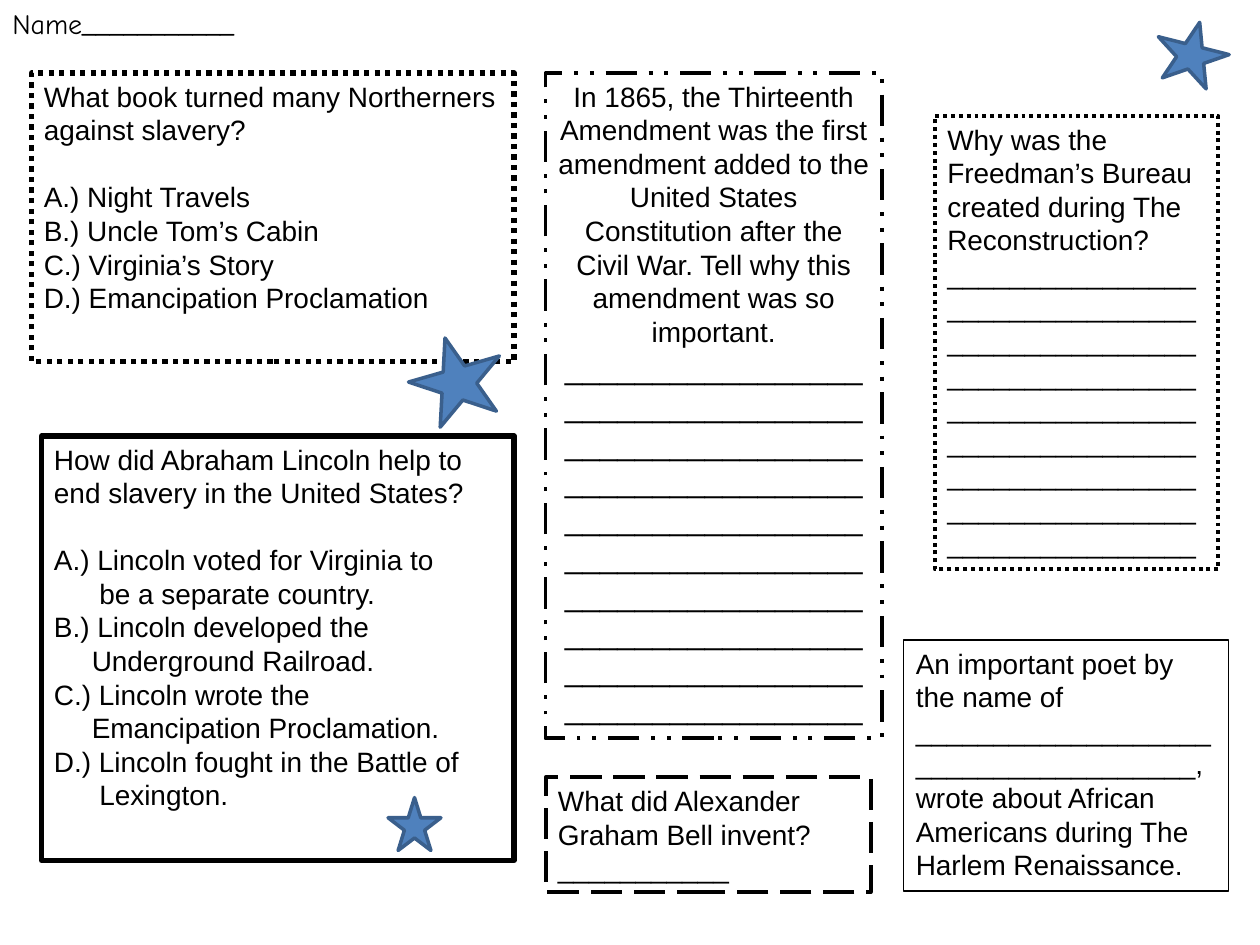
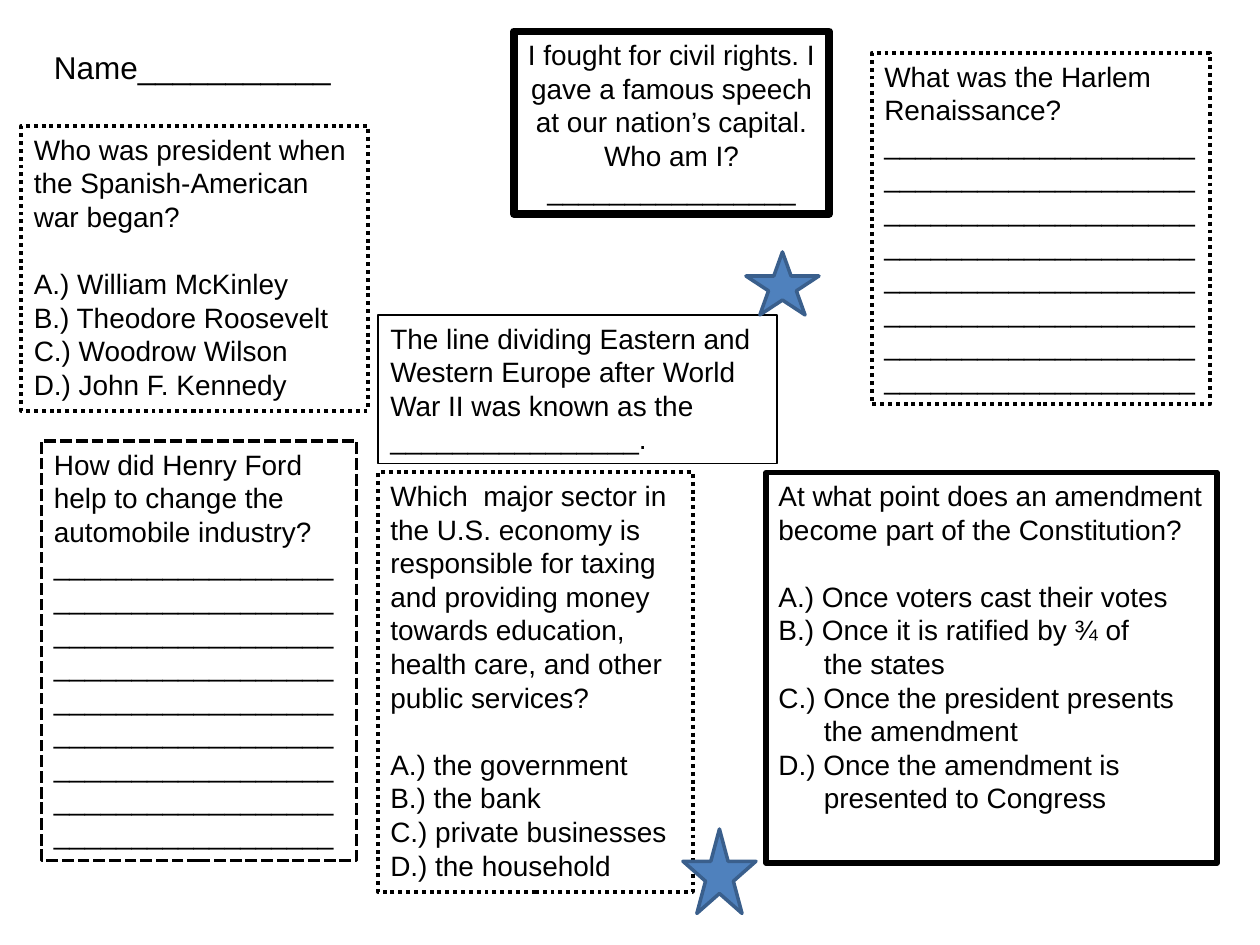
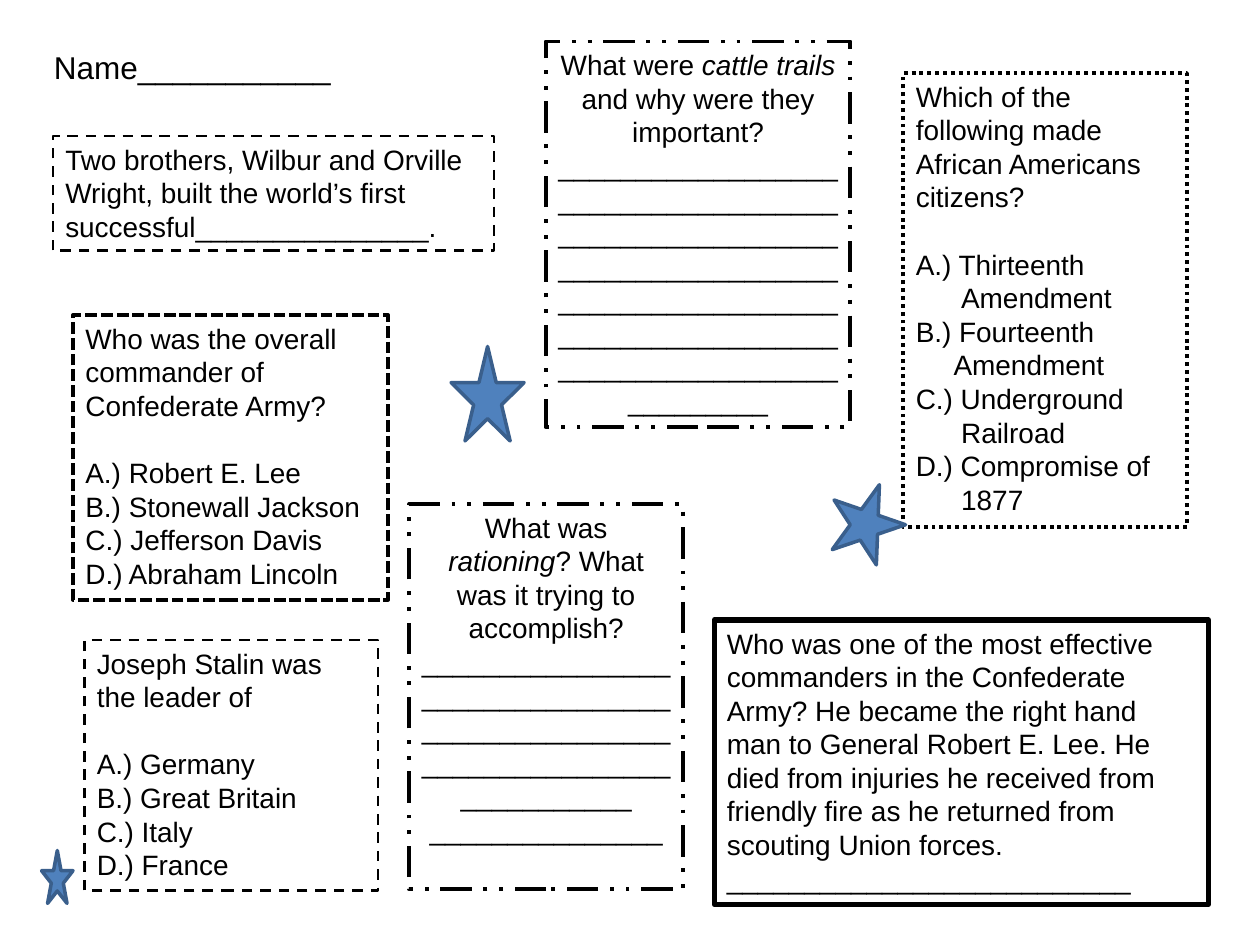
from dataclasses import dataclass

from pptx import Presentation
from pptx.dml.color import RGBColor
from pptx.enum.dml import MSO_LINE
from pptx.enum.shapes import MSO_SHAPE
from pptx.enum.text import MSO_ANCHOR, MSO_AUTO_SIZE, PP_ALIGN
from pptx.util import Inches, Pt

LEFT, CENTER = PP_ALIGN.LEFT, PP_ALIGN.CENTER
TOP, FIXED = MSO_ANCHOR.TOP, MSO_AUTO_SIZE.NONE
STAR = MSO_SHAPE.STAR_5_POINT
SOLID, DOTS = MSO_LINE.SOLID, MSO_LINE.ROUND_DOT
DASH, LONG, MIXED = MSO_LINE.DASH, MSO_LINE.LONG_DASH, MSO_LINE.DASH_DOT_DOT
SHORT = MSO_LINE.SQUARE_DOT
BLANK = 6


@dataclass(frozen=True)
class Theme:
    ink: RGBColor = RGBColor(0x00, 0x00, 0x00)
    fill: RGBColor = RGBColor(0x4F, 0x81, 0xBD)
    edge: RGBColor = RGBColor(0x3A, 0x5F, 0x8C)
    font: str = "Arial"
    hand: str = "Comic Neue"
    body: int = 16
    large: int = 18
    gap: float = 19.2
    step: float = 0.06


THEME = Theme()


def write(frame, text, size=THEME.body, font=THEME.font, align=LEFT, before=0, indent=0):
    """Add a paragraph; words between asterisks are italic."""
    fresh = not frame.paragraphs[0].runs
    para = frame.paragraphs[0] if fresh else frame.add_paragraph()
    para.alignment = align
    if before and not fresh:
        para.space_before = Pt(before)
    if indent:
        props = para._p.get_or_add_pPr()
        props.set("marL", str(Inches(indent)))
        props.set("indent", "0")
    for place, part in enumerate(text.split("*")):
        run = para.add_run()
        run.text = part
        run.font.name = font
        run.font.size = Pt(size)
        run.font.color.rgb = THEME.ink
        run.font.italic = place % 2 == 1


def frame(slide, box, width=0, dash=SOLID, wrap=True):
    """Add a text box with an optional border and return its text frame."""
    shape = slide.shapes.add_textbox(*map(Inches, box))
    if width:
        shape.line.color.rgb = THEME.ink
        shape.line.width = Pt(width)
        shape.line.dash_style = dash
    text = shape.text_frame
    text.word_wrap = wrap
    text.auto_size = FIXED
    text.vertical_anchor = TOP
    return text


def label(slide, box=(0.33, 0.33, 2.42, 0.4), size=THEME.large, font=THEME.font):
    write(frame(slide, box), "Name" + "_" * 11, size=size, font=font)


def quiz(slide, box, width, dash, question, choices):
    """A question with lettered choices; a choice may be (line, next line, spaces)."""
    text = frame(slide, box, width, dash)
    write(text, question)
    for place, (letter, choice) in enumerate(zip("ABCD", choices)):
        first, rest, depth = (choice, "", 0) if isinstance(choice, str) else choice
        write(text, f"{letter}.) {first}", before=0 if place else THEME.gap)
        if rest:
            write(text, rest, indent=depth * THEME.step)


def ask(slide, box, width, dash, question, *rules, align=LEFT, size=THEME.body):
    """A question followed by rules to write on, given as counts or as text."""
    text = frame(slide, box, width, dash)
    write(text, question, align=align)
    for rule in rules:
        line = rule if isinstance(rule, str) else "_" * rule
        write(text, line, size=size, align=align)


def star(slide, box, turn=0):
    shape = slide.shapes.add_shape(STAR, *map(Inches, box))
    shape.shadow.inherit = False
    shape.rotation = turn
    shape.fill.solid()
    shape.fill.fore_color.rgb = THEME.fill
    shape.line.color.rgb = THEME.edge
    shape.line.width = Pt(2)


def slavery(slide):
    label(slide, (0, 0, 10, 7.5), size=THEME.body, font=THEME.hand)
    quiz(slide, (0.25, 0.58, 3.83, 2.29), 3, DOTS,
         "What book turned many Northerners against slavery?",
         ["Night Travels", "Uncle Tom’s Cabin", "Virginia’s Story",
          "Emancipation Proclamation"])
    ask(slide, (4.33, 6.17, 2.58, 0.91), 2.25, LONG,
        "What did Alexander Graham Bell invent?" + "_" * 11)
    quiz(slide, (0.33, 3.46, 3.75, 3.37), 3, SOLID,
         "How did Abraham Lincoln help to end slavery in the United States?",
         [("Lincoln voted for Virginia to", "be a separate country.", 6),
          ("Lincoln developed the", "Underground Railroad.", 5),
          ("Lincoln wrote the", "Emancipation Proclamation.", 5),
          ("Lincoln fought in the Battle of", "Lexington.", 6)])
    ask(slide, (4.33, 0.58, 2.67, 5.28), 2.25, MIXED,
        "In 1865, the Thirteenth Amendment was the first amendment added to the "
        "United States Constitution after the Civil War. Tell why this amendment "
        "was so important.", 170, align=CENTER, size=THEME.large)
    ask(slide, (7.42, 0.92, 2.25, 3.6), 2.25, DOTS,
        "Why was the Freedman’s Bureau created during The Reconstruction?", 144)
    ask(slide, (7.17, 5.08, 2.58, 1.99), 1, SOLID,
        "An important poet by the name of " + "_" * 37 + ",",
        "wrote about African Americans during The Harlem Renaissance.")
    star(slide, (3.25, 2.67, 0.75, 0.67), 344)
    star(slide, (9.17, 0.17, 0.58, 0.5), 14.2)
    star(slide, (3.08, 6.33, 0.42, 0.42))


def rights(slide):
    quiz(slide, (6.08, 3.75, 3.58, 3.1), 3, SOLID,
         "At what point does an amendment become part of the Constitution?",
         ["Once voters cast their votes",
          ("Once it is ratified by ¾ of", "the states", 6),
          ("Once the president presents", "the amendment", 6),
          ("Once the amendment is", "presented to Congress", 6)])
    label(slide)
    quiz(slide, (3, 3.75, 2.5, 3.33), 2.25, DOTS,
         "Which  major sector in the U.S. economy is responsible for taxing and "
         "providing money towards education, health care, and other public services?",
         ["the government", "the bank", "private businesses", "the household"])
    ask(slide, (6.92, 0.42, 2.68, 2.79), 2.25, DOTS,
        "What was the Harlem Renaissance?", 160)
    ask(slide, (3, 2.5, 3.17, 1.18), 1, SOLID,
        "The line dividing Eastern and Western Europe after World War II was known "
        "as the " + "_" * 16 + ".")
    star(slide, (5.92, 2, 0.58, 0.5))
    star(slide, (5.42, 6.58, 0.58, 0.67))
    ask(slide, (0.33, 3.5, 2.5, 3.33), 2.25, SHORT,
        "How did Henry Ford help to change the automobile industry?", 162)
    quiz(slide, (0.17, 1, 2.75, 2.26), 2.25, DOTS,
         "Who was president when the Spanish-American war began?",
         ["William McKinley", "Theodore Roosevelt", "Woodrow Wilson",
          "John F. Kennedy"])
    ask(slide, (4.08, 0.25, 2.5, 1.45), 4.5, SOLID,
        "I fought for civil rights. I gave a famous speech at our nation’s capital. "
        "Who am I? " + "_" * 16, align=CENTER)


def wars(slide):
    label(slide)
    ask(slide, (5.67, 4.92, 3.92, 2.26), 3, SOLID,
        "Who was one of the most effective commanders in the Confederate Army? He "
        "became the right hand man to General Robert E. Lee. He died from injuries "
        "he received from friendly fire as he returned from scouting Union forces.",
        26)
    quiz(slide, (0.58, 2.5, 2.5, 2.26), 2.25, SHORT,
         "Who was the overall commander of Confederate Army?",
         ["Robert E. Lee", "Stonewall Jackson", "Jefferson Davis", "Abraham Lincoln"])
    quiz(slide, (7.17, 0.58, 2.25, 3.6), 2.25, DOTS,
         "Which of the following made African Americans citizens?",
         [("Thirteenth", "Amendment", 6), ("Fourteenth", "Amendment", 5),
          ("Underground", "Railroad", 6), ("Compromise of", "1877", 6)])
    ask(slide, (4.33, 0.33, 2.42, 3.06), 2.25, MIXED,
        "What were *cattle trails *and why were they important?", 135, align=CENTER)
    ask(slide, (0.42, 1.08, 3.5, 0.91), 1.5, DASH,
        "Two brothers, Wilbur and Orville Wright, built the world’s first "
        "successful" + "_" * 15 + ".")
    quiz(slide, (0.67, 5.08, 2.33, 1.99), 1.5, DASH,
         "Joseph Stalin was the leader of",
         ["Germany", "Great Britain", "Italy", "France"])
    ask(slide, (3.25, 4, 2.17, 3.06), 2.25, MIXED,
        "What was *rationing*? What was it trying to accomplish?", 75, 15,
        align=CENTER)
    star(slide, (3.58, 2.75, 0.58, 0.75))
    star(slide, (6.58, 3.83, 0.6, 0.61), 19.1)
    star(slide, (0.33, 6.75, 0.25, 0.42))


def main():
    deck = Presentation()
    deck.slide_width, deck.slide_height = Inches(10), Inches(7.5)
    for build in (slavery, rights, wars):
        build(deck.slides.add_slide(deck.slide_layouts[BLANK]))
    deck.save("out.pptx")


if __name__ == "__main__":
    main()
